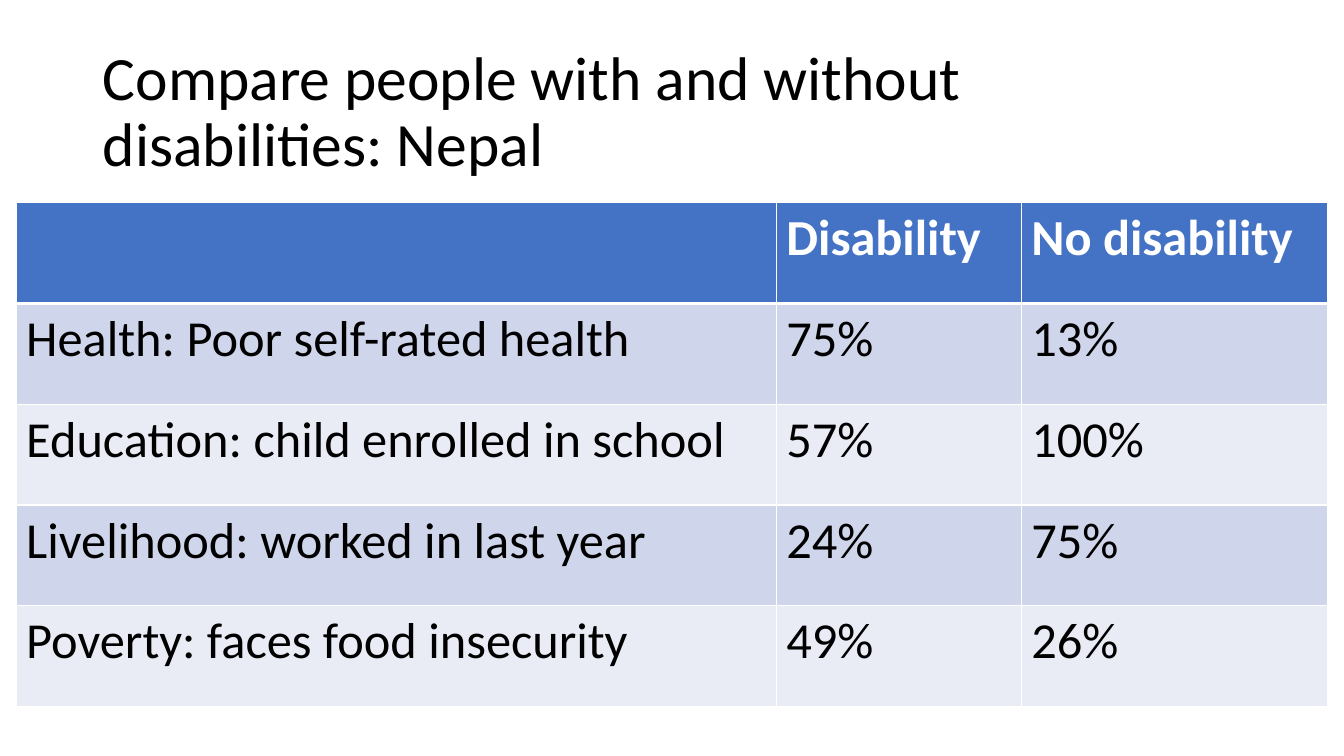
from dataclasses import dataclass

from lxml.etree import SubElement
from pptx import Presentation
from pptx.dml.color import RGBColor
from pptx.enum.text import MSO_ANCHOR, MSO_AUTO_SIZE, PP_ALIGN
from pptx.oxml.ns import qn
from pptx.slide import Slide
from pptx.table import _Cell
from pptx.text.text import _Paragraph
from pptx.util import Inches, Pt

FONT = "Calibri"
WHITE, BLACK = "FFFFFF", "000000"
HEADER_FILL = "4472C4"
BAND_FILLS = ("CFD5EA", "E9EBF5")
COLUMN_WIDTHS = (7.54, 2.43, 3.04)
ROW_HEIGHT = 1.0


@dataclass(frozen=True)
class Indicator:
    label: str
    disability: str
    no_disability: str


HEADER = Indicator("", "Disability", "No disability")
INDICATORS = (
    Indicator("Health: Poor self-rated health", "75%", "13%"),
    Indicator("Education: child enrolled in school", "57%", "100%"),
    Indicator("Livelihood: worked in last year", "24%", "75%"),
    Indicator("Poverty: faces food insecurity", "49%", "26%"),
)


def color(value: str) -> RGBColor:
    return RGBColor.from_string(value)


def format_paragraph(para: _Paragraph, size: float, shade: str, bold: bool = False) -> None:
    para.alignment = PP_ALIGN.LEFT
    for span in para.runs:
        span.font.name = FONT
        span.font.size = Pt(size)
        span.font.bold = bold
        span.font.color.rgb = color(shade)


def add_borders(cell: _Cell, top: float, bottom: float) -> None:
    """Draw white borders; widths are in points. Call before filling the cell."""
    properties = cell._tc.get_or_add_tcPr()
    for side, width in (("L", 1), ("R", 1), ("T", top), ("B", bottom)):
        line = SubElement(properties, qn(f"a:ln{side}"), w=str(Pt(width)))
        fill = SubElement(line, qn("a:solidFill"))
        SubElement(fill, qn("a:srgbClr"), val=WHITE)


def add_title(page: Slide, text: str) -> None:
    title = page.shapes.title
    title.left, title.top = Inches(0.92), Inches(0.4)
    title.width, title.height = Inches(11.5), Inches(1.45)
    frame = title.text_frame
    frame.text = text
    frame.word_wrap = True
    frame.auto_size = MSO_AUTO_SIZE.NONE
    frame.vertical_anchor = MSO_ANCHOR.MIDDLE
    frame.paragraphs[0].line_spacing = 0.9
    format_paragraph(frame.paragraphs[0], 44, BLACK)


def add_comparison_table(page: Slide) -> None:
    rows = (HEADER, *INDICATORS)
    table = page.shapes.add_table(
        len(rows), len(COLUMN_WIDTHS), Inches(0.16), Inches(2.01),
        Inches(sum(COLUMN_WIDTHS)), Inches(ROW_HEIGHT * len(rows)),
    ).table
    for column, width in zip(table.columns, COLUMN_WIDTHS):
        column.width = Inches(width)

    for row_index, row in enumerate(rows):
        is_header = row_index == 0
        fill = HEADER_FILL if is_header else BAND_FILLS[(row_index - 1) % 2]
        texts = (row.label, row.disability, row.no_disability)
        for column_index, text in enumerate(texts):
            cell = table.cell(row_index, column_index)
            add_borders(cell, top=3 if row_index == 1 else 1, bottom=3 if is_header else 1)
            cell.fill.solid()
            cell.fill.fore_color.rgb = color(fill)
            if text:
                cell.text_frame.text = text
                format_paragraph(cell.text_frame.paragraphs[0], 36,
                                 WHITE if is_header else BLACK, is_header)


def main() -> None:
    deck = Presentation()
    deck.slide_width, deck.slide_height = Inches(13.33), Inches(7.5)
    page = deck.slides.add_slide(deck.slide_layouts[5])  # Title Only

    # Heading
    add_title(page, "Compare people with and without disabilities: Nepal")

    # Indicators by disability status
    add_comparison_table(page)

    deck.save("out.pptx")


if __name__ == "__main__":
    main()
